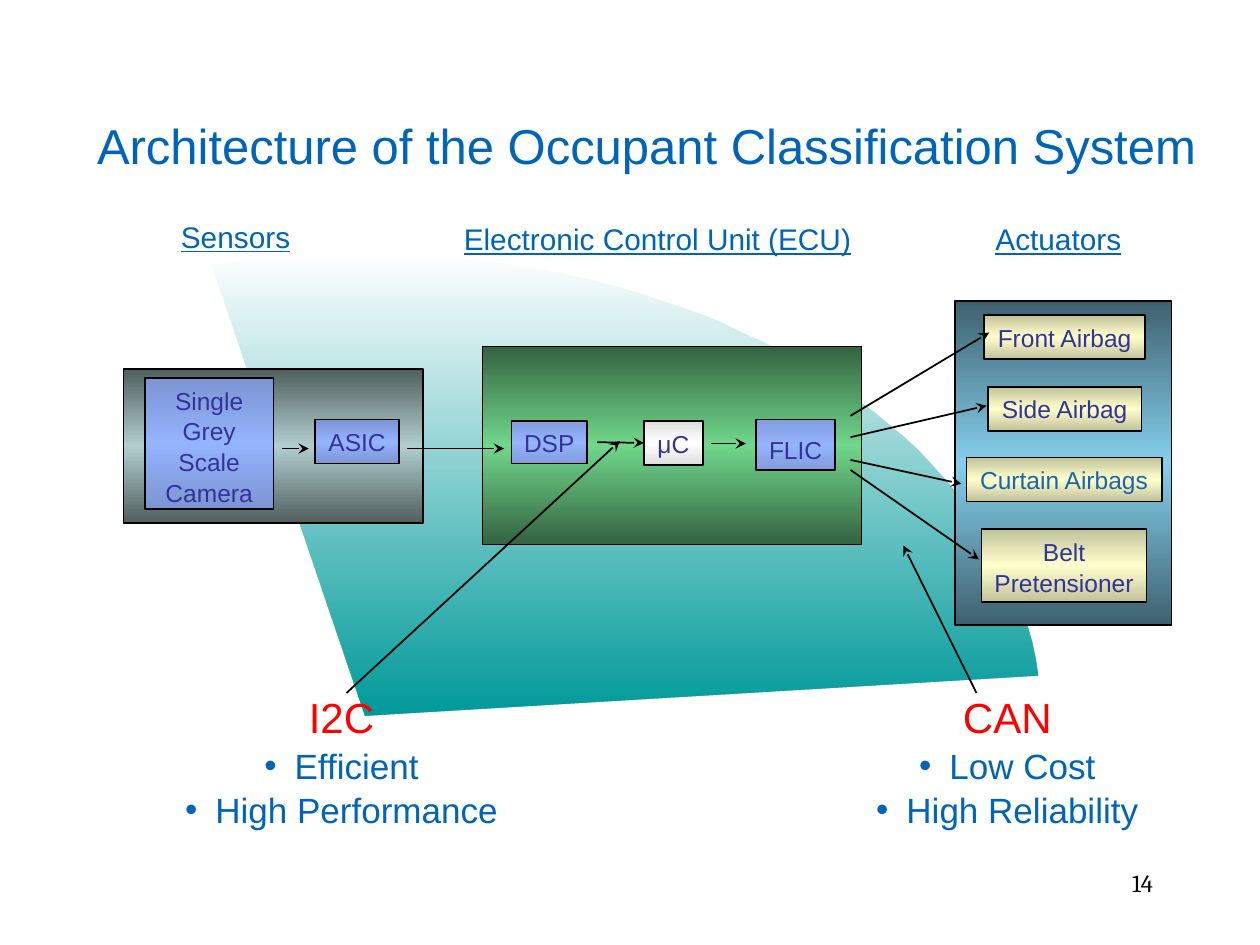
import pptx
import pptx.util
import pptx.dml.color
import pptx.enum.shapes
import pptx.enum.text
import pptx.oxml.ns
import lxml.etree

RGBColor = pptx.dml.color.RGBColor
Pt = pptx.util.Pt
qn = pptx.oxml.ns.qn
ALIGN = pptx.enum.text.PP_ALIGN
ANCHOR = pptx.enum.text.MSO_ANCHOR
FIT = pptx.enum.text.MSO_AUTO_SIZE

PX = 9144  # 100 px to the inch
LINE_SPACING = 1.05
TITLE_SPACING = Pt(22.2)
BULLET_INDENT = 24

BLACK = RGBColor(0, 0, 0)
WHITE = RGBColor(255, 255, 255)
RED = RGBColor(255, 0, 0)
TEAL = RGBColor(0x00, 0x99, 0x99)
BLUE = RGBColor(0x00, 0x64, 0xB9)
CURTAIN_BLUE = RGBColor(0x19, 0x65, 0xB1)
INDIGO = RGBColor(0x33, 0x33, 0x99)
GREY_GREEN = RGBColor(0xB0, 0xCE, 0xCD)
GREEN = RGBColor(0x71, 0xD7, 0x8C)
SKY = RGBColor(0x85, 0xCF, 0xED)
PERIWINKLE = RGBColor(0x95, 0xB4, 0xFE)
CREAM = RGBColor(0xFF, 0xFF, 0xCC)

TITLE = "Architecture of the Occupant Classification System"
PAGE_NUMBER = "14"

# Column headings: text, box
HEADINGS = [
    ("Sensors", (133, 167, 108, 39)),
    ("Electronic Control Unit (ECU)", (357, 169, 330, 39)),
    ("Actuators", (779, 169, 122, 39)),
]

# Panels: box, middle colour, edge shade, line width
PANELS = [
    ((98, 293, 238, 122), GREY_GREEN, 0.46, 1),
    ((758, 239, 172, 257), SKY, 0.47, 0.75),
    ((383, 275, 301, 157), GREEN, 0.46, 0.75),
]

# Components: text, box, middle colour, edge shade, text colour
COMPONENTS = [
    ("ASIC", (250, 333, 67, 35), PERIWINKLE, 0.83, INDIGO),
    ("Single Grey Scale Camera", (115, 300, 102, 104), PERIWINKLE, 0.83, INDIGO),
    ("Front Airbag", (781, 250, 128, 35), CREAM, 0.76, INDIGO),
    ("Side Airbag", (784, 307, 122, 35), CREAM, 0.76, INDIGO),
    ("Belt\nPretensioner", (779, 420, 131, 58), CREAM, 0.76, INDIGO),
    ("Curtain Airbags", (767, 363, 155, 35), CREAM, 0.76, CURTAIN_BLUE),
    ("FLIC", (600, 333, 63, 40), PERIWINKLE, 0.87, INDIGO),
    ("μC", (511, 334, 47, 35), WHITE, 0.87, INDIGO),
    ("DSP", (406, 334, 60, 34), PERIWINKLE, 0.87, INDIGO),
]
WRAPPED = {"Single Grey Scale Camera"}

# Arrows: start, end, component whose left side the end joins
ARROWS = [
    ((224, 356), (245, 356), None),
    ((474, 351), (510, 351), "μC"),
    ((564, 352), (592, 352), None),
    ((323, 356), (400, 356), None),
    ((775, 550), (717, 433), None),
    ((275, 550), (492, 350), None),
    ((675, 347), (783, 322), None),
    ((675, 365), (763, 384), None),
    ((675, 373), (777, 444), None),
    ((675, 330), (785, 264), None),
]

# Buses: name, benefits, box
BUSES = [
    ("CAN", ["Low Cost", "High Reliability"], (658, 542, 283, 118)),
    ("I2C", ["Efficient", "High Performance"], (117, 542, 308, 158)),
]

# Sector: top left corner, two Bézier arcs (control, control, end), tip
SECTOR_START = (167, 210)
SECTOR_ARCS = [
    [(207, 203), (248, 200), (289, 200)],
    [(568, 200), (801, 346), (825, 537)],
]
SECTOR_TIP = (289, 569)
ARC_STEPS = 40

presentation = pptx.Presentation()
presentation.slide_width = 1000 * PX
presentation.slide_height = 750 * PX
slide = presentation.slides.add_slide(presentation.slide_layouts[6])


def emu(box):
    return [length * PX for length in box]


def shade(colour, factor):
    return RGBColor(*(round(channel * factor) for channel in colour))


def fill_down(shape, colours):
    """Fill with a top-to-bottom gradient through evenly spaced colours."""
    shape.fill.gradient()
    shape.fill.gradient_angle = 270
    stops = shape._element.spPr.find(".//" + qn("a:gsLst"))
    for stop in list(stops):
        stops.remove(stop)
    for i, colour in enumerate(colours):
        position = str(100000 * i // (len(colours) - 1))
        stop = lxml.etree.SubElement(stops, qn("a:gs"), pos=position)
        lxml.etree.SubElement(stop, qn("a:srgbClr"), val=str(colour))


def write(shape, text, size, colour, font="Arial", align=ALIGN.CENTER,
          spacing=LINE_SPACING, wrap=False, fit=FIT.SHAPE_TO_FIT_TEXT,
          anchor=ANCHOR.TOP, underline=None):
    frame = shape.text_frame
    frame.text = text
    frame.word_wrap = wrap
    frame.auto_size = fit
    frame.vertical_anchor = anchor
    for paragraph in frame.paragraphs:
        paragraph.alignment = align
        paragraph.line_spacing = spacing
        for run in paragraph.runs:
            run.font.name = font
            run.font.size = Pt(size)
            run.font.color.rgb = colour
            run.font.underline = underline
    return frame


def add_box(box, colour, factor, line_width):
    shape = slide.shapes.add_shape(
        pptx.enum.shapes.MSO_SHAPE.RECTANGLE, *emu(box))
    shape.shadow.inherit = False
    edge = shade(colour, factor)
    fill_down(shape, [edge, colour, edge])
    shape.line.color.rgb = BLACK
    shape.line.width = Pt(line_width)
    return shape


def arc_points(start, control1, control2, end):
    for step in range(1, ARC_STEPS + 1):
        t = step / ARC_STEPS
        u = 1 - t
        yield tuple(
            u**3 * a + 3 * u * u * t * b + 3 * u * t * t * c + t**3 * d
            for a, b, c, d in zip(start, control1, control2, end))


# Page number and title
write(slide.shapes.add_textbox(*emu((717, 683, 208, 50))), PAGE_NUMBER, 14,
      BLACK, font="Cambria", align=ALIGN.RIGHT, wrap=True, fit=FIT.NONE)
title = slide.shapes.add_textbox(*emu((67, 67, 892, 75)))
title_frame = write(title, TITLE, 28, BLUE, spacing=TITLE_SPACING, wrap=True,
                    fit=FIT.NONE, anchor=ANCHOR.BOTTOM)
title_frame.margin_left = title_frame.margin_right = 9 * PX
title_frame.margin_top = title_frame.margin_bottom = 4 * PX

# Sector behind the diagram
outline = []
arc_start = SECTOR_START
for arc in SECTOR_ARCS:
    outline += arc_points(arc_start, *arc)
    arc_start = arc[-1]
builder = slide.shapes.build_freeform(*SECTOR_START, scale=PX)
builder.add_line_segments(outline + [SECTOR_TIP], close=True)
sector = builder.convert_to_shape()
sector.shadow.inherit = False
fill_down(sector, [WHITE, TEAL])
sector.line.color.rgb = WHITE
sector.line.width = Pt(1)

# Headings, panels and components
for text, box in HEADINGS:
    write(slide.shapes.add_textbox(*emu(box)), text, 17, BLUE, underline=True)
for panel in PANELS:
    add_box(*panel)
components = {}
for text, box, colour, factor, text_colour in COMPONENTS:
    components[text] = add_box(box, colour, factor, 1)
    write(components[text], text, 14, text_colour, wrap=text in WRAPPED,
          spacing=TITLE_SPACING if text == "FLIC" else LINE_SPACING)

# Arrows
for start, end, target in ARROWS:
    arrow = slide.shapes.add_connector(
        pptx.enum.shapes.MSO_CONNECTOR.STRAIGHT, *emu(start + end))
    if target:
        arrow.end_connect(components[target], 1)
    arrow.line.color.rgb = BLACK
    arrow.line.width = Pt(1)
    lxml.etree.SubElement(arrow.line._get_or_add_ln(), qn("a:tailEnd"),
                          type="stealth")
    lxml.etree.SubElement(arrow._element.spPr, qn("a:effectLst"))

# Bus names with their benefits
for name, benefits, box in BUSES:
    frame = write(slide.shapes.add_textbox(*emu(box)),
                  "\n".join([name] + benefits), 20, BLUE, wrap=True)
    bus_name = frame.paragraphs[0].runs[0]
    bus_name.font.size = Pt(24)
    bus_name.font.color.rgb = RED
    for paragraph in frame.paragraphs[1:]:
        properties = paragraph._p.get_or_add_pPr()
        properties.set("marL", str(BULLET_INDENT * PX))
        properties.set("indent", str(-BULLET_INDENT * PX))
        lxml.etree.SubElement(properties, qn("a:buFont"), typeface="Arial")
        lxml.etree.SubElement(properties, qn("a:buChar"), char="•")

presentation.save("out.pptx")
